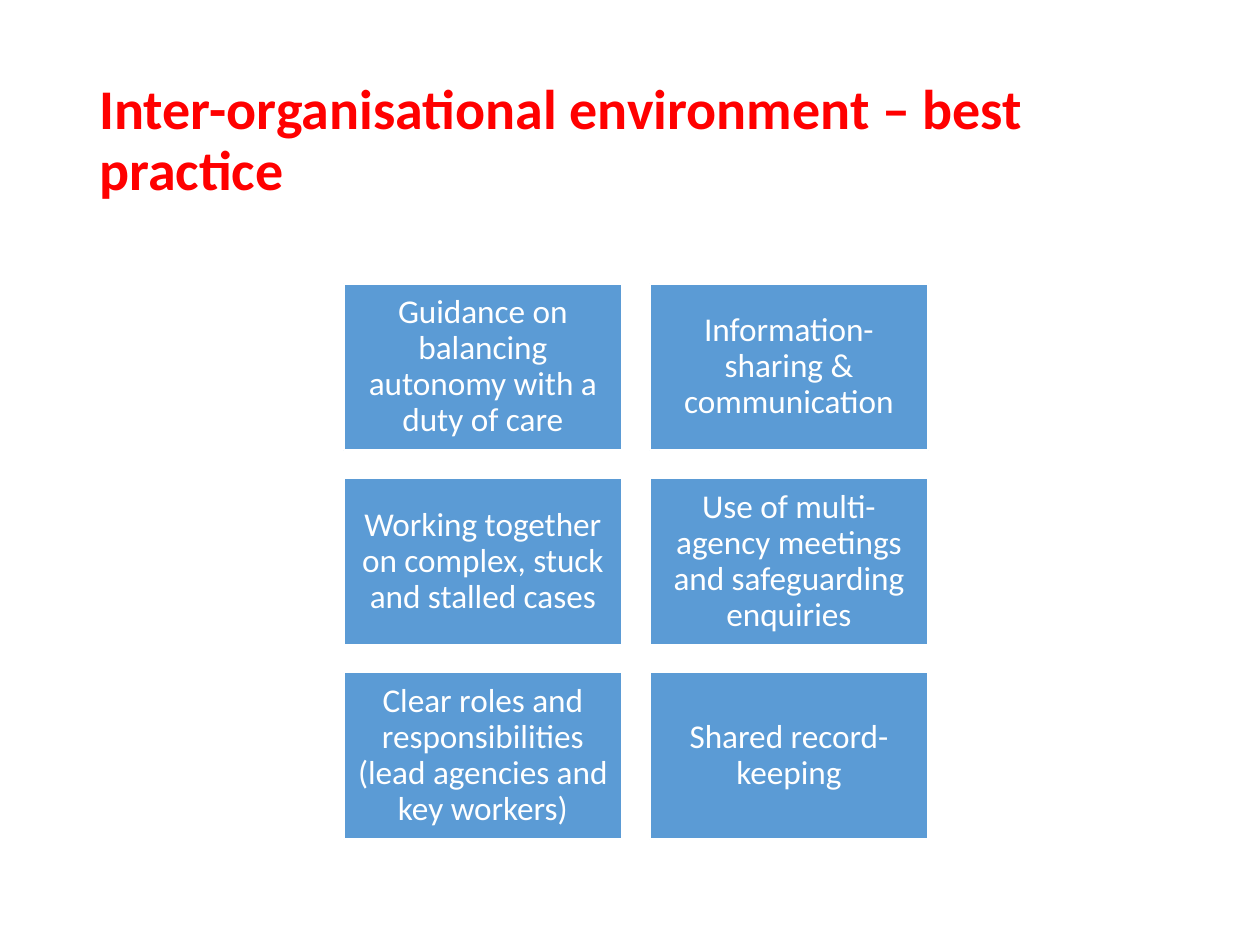
"""Build a slide showing best practice in the inter-organisational environment."""
from pptx import Presentation
from pptx.dml.color import RGBColor
from pptx.enum.shapes import MSO_SHAPE
from pptx.enum.text import MSO_ANCHOR, MSO_AUTO_SIZE, PP_ALIGN
from pptx.util import Cm, Pt

RED = RGBColor(0xFF, 0x00, 0x00)
BLUE = RGBColor(0x5B, 0x9B, 0xD5)
WHITE = RGBColor(0xFF, 0xFF, 0xFF)
RECTANGLE = MSO_SHAPE.RECTANGLE
MIDDLE = MSO_ANCHOR.MIDDLE
NO_FIT = MSO_AUTO_SIZE.NONE
LEFT, CENTER = PP_ALIGN.LEFT, PP_ALIGN.CENTER

PRACTICES = [
    "Guidance on balancing autonomy with a duty of care",
    "Information-sharing & communication",
    "Working together on complex, stuck and stalled cases",
    "Use of multi-agency meetings and safeguarding enquiries",
    "Clear roles and responsibilities (lead agencies and key workers)",
    "Shared record-keeping",
]
COLUMNS = 2
GRID_LEFT, GRID_TOP = 6.93, 5.72
BOX_WIDTH, BOX_HEIGHT, GAP = 5.61, 3.36, 0.56


class SlideBuilder:
    """Hold the text style and the slide being built."""

    font_name = "Calibri"
    line_spacing = 0.9

    def __init__(self, slide):
        self.slide = slide

    def set_text(self, frame, text, align, size, color, bold=False):
        frame.text = text
        frame_format = {"word_wrap": True, "auto_size": NO_FIT, "vertical_anchor": MIDDLE}
        for name, value in frame_format.items():
            setattr(frame, name, value)
        paragraph = frame.paragraphs[0]
        paragraph.alignment = align
        paragraph.line_spacing = self.line_spacing
        font = paragraph.runs[0].font
        font_format = {"name": self.font_name, "size": Pt(size), "bold": bold}
        for name, value in font_format.items():
            setattr(font, name, value)
        font.color.rgb = color

    def title(self, text, left, top, width, height):
        heading = self.slide.shapes.title
        place = {"left": left, "top": top, "width": width, "height": height}
        for name, value in place.items():
            setattr(heading, name, Cm(value))
        self.set_text(heading.text_frame, text, LEFT, 32, RED, bold=True)

    def box(self, text, left, top):
        practice = self.slide.shapes.add_shape(
            RECTANGLE, Cm(left), Cm(top), Cm(BOX_WIDTH), Cm(BOX_HEIGHT))
        practice.shadow.inherit = False
        practice.fill.solid()
        practice.fill.fore_color.rgb = BLUE
        practice.line.color.rgb = WHITE
        practice.line.width = Pt(1)
        frame = practice.text_frame
        for side in ("left", "top", "right", "bottom"):
            setattr(frame, f"margin_{side}", Cm(0.2))
        self.set_text(frame, text, CENTER, 19, WHITE)


def main():
    presentation = Presentation()
    presentation.slide_width = Cm(25.4)
    presentation.slide_height = Cm(19.05)
    builder = SlideBuilder(presentation.slides.add_slide(presentation.slide_layouts[5]))
    builder.title("Inter-organisational environment – best practice", 1.75, 1.02, 21.9, 3.68)
    for index, practice in enumerate(PRACTICES):
        row, column = divmod(index, COLUMNS)
        builder.box(practice,
                    GRID_LEFT + column * (BOX_WIDTH + GAP),
                    GRID_TOP + row * (BOX_HEIGHT + GAP))
    presentation.save("out.pptx")


if __name__ == "__main__":
    main()
